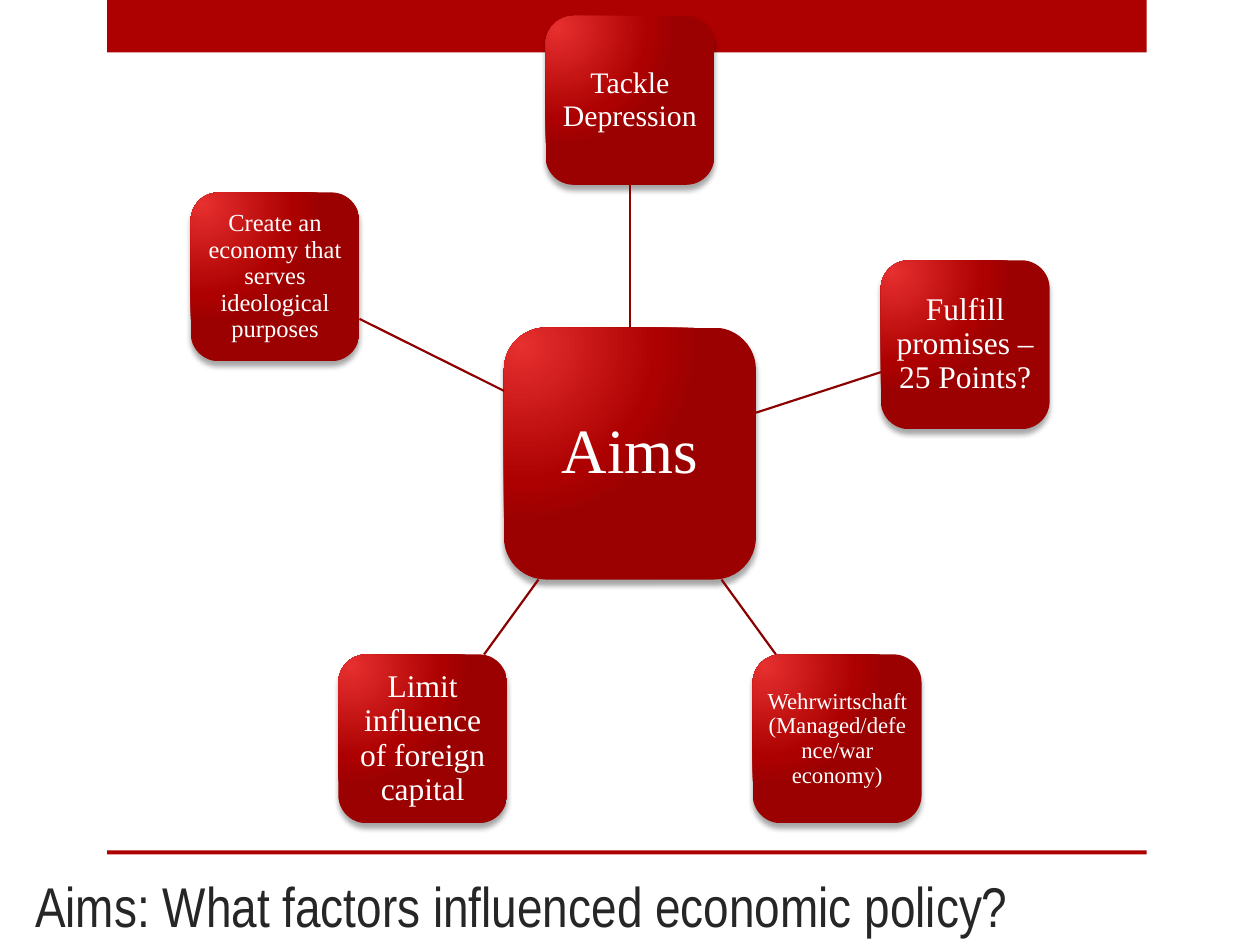
from pptx import Presentation, oxml
from pptx import util as u
from pptx.dml import color
from pptx.enum import shapes, text
from pptx.oxml import ns

RED, LINE_RED = "AD0101", "8B0101"
GRADIENT = f"""<a:gradFill {ns.nsdecls('a')} rotWithShape="1"><a:gsLst>
<a:gs pos="0"><a:srgbClr val="E62F2F"/></a:gs>
<a:gs pos="76000"><a:srgbClr val="{RED}"/></a:gs>
<a:gs pos="100000"><a:srgbClr val="9C0101"/></a:gs></a:gsLst>
<a:path path="circle"><a:fillToRect l="15000" t="15000" r="100000" b="100000"/></a:path>
</a:gradFill>"""
SHADOW = f"""<a:outerShdw {ns.nsdecls('a')} blurRad="38100" dist="38100" dir="5400000"
rotWithShape="0"><a:srgbClr val="000000"><a:alpha val="35000"/></a:srgbClr></a:outerShdw>"""


def rgb(value):
    return color.RGBColor.from_string(value)


def add_box(center_x, center_y, side, label, size, inset):
    """Add a glossy rounded square with centred text."""
    shape = slide.shapes.add_shape(
        shapes.MSO_SHAPE.ROUNDED_RECTANGLE, u.Pt(center_x - side / 2),
        u.Pt(center_y - side / 2), u.Pt(side), u.Pt(side))
    shape.line.fill.background()
    shape.shadow.inherit = False
    properties = shape._element.spPr
    properties.insert(2, oxml.parse_xml(GRADIENT))
    properties.find(ns.qn("a:effectLst")).append(oxml.parse_xml(SHADOW))
    frame = shape.text_frame
    frame.word_wrap = True
    frame.vertical_anchor = text.MSO_ANCHOR.MIDDLE
    frame.margin_left = frame.margin_right = u.Pt(inset)
    frame.margin_top = frame.margin_bottom = u.Pt(inset)
    paragraph = frame.paragraphs[0]
    paragraph.alignment = text.PP_ALIGN.CENTER
    paragraph.line_spacing = 0.9
    run = paragraph.add_run()
    run.text = label
    run.font.name = "Times New Roman"
    run.font.size = u.Pt(size)
    run.font.color.rgb = rgb("FFFFFF")
    return shape


presentation = Presentation()
presentation.slide_width, presentation.slide_height = u.Pt(720), u.Pt(540)
slide = presentation.slides.add_slide(presentation.slide_layouts[6])

# Top band and bottom rule
for top, height in ((0, 30), (486, 2.2)):
    bar = slide.shapes.add_shape(
        shapes.MSO_SHAPE.RECTANGLE, u.Pt(61.2), u.Pt(top), u.Pt(594), u.Pt(height))
    bar.fill.solid()
    bar.fill.fore_color.rgb = rgb(RED)
    bar.line.fill.background()
    bar.shadow.inherit = False

# Title
title = slide.shapes.add_textbox(u.Pt(13), u.Pt(480), u.Pt(707), u.Pt(60))
title.text_frame.word_wrap = True
title.text_frame.vertical_anchor = text.MSO_ANCHOR.BOTTOM
run = title.text_frame.paragraphs[0].add_run()
run.text = "Aims: What factors influenced economic policy?"
run.font.name = "Arial Narrow"
run.font.size = u.Pt(32)
run.font.color.rgb = rgb("262626")

# Hub
hub_x, hub_y, hub_side, factor_side = 360, 259.2, 144, 96.5
hub = add_box(hub_x, hub_y, hub_side, "Aims", 36, 7.2)

# Factors: centre x, centre y, label, text size, inset
factors = [
    (360, 57.4, "Tackle Depression", 17, 3.4),
    (551.6, 197, "Fulfill promises – 25 Points?", 18, 3.6),
    (478.4, 422.2, "Wehrwirtschaft (Managed/defence/war economy)", 13, 2.6),
    (241.6, 422.2, "Limit influence of foreign capital", 18, 3.6),
    (157.2, 158.2, "Create an economy that serves ideological purposes", 14, 2.8),
]
for x, y, label, size, inset in factors:
    factor = add_box(x, y, factor_side, label, size, inset)
    # The spoke follows the line between centres, cut at both box edges
    dx, dy = x - hub_x, y - hub_y
    reach = max(abs(dx), abs(dy))
    start, end = hub_side / 2 / reach, 1 - factor_side / 2 / reach
    spoke = slide.shapes.add_connector(
        shapes.MSO_CONNECTOR.STRAIGHT,
        u.Pt(hub_x + dx * start), u.Pt(hub_y + dy * start),
        u.Pt(hub_x + dx * end), u.Pt(hub_y + dy * end))
    if dx == 0:
        spoke.begin_connect(hub, 0)
        spoke.end_connect(factor, 2)
    spoke.line.color.rgb = rgb(LINE_RED)
    spoke.line.width = u.Pt(1.25)
    oxml.parse_xml  # namespace-aware elements come from pptx.oxml
    spoke._element.spPr.append(oxml.parse_xml(f"<a:effectLst {ns.nsdecls('a')}/>"))

presentation.save("out.pptx")
